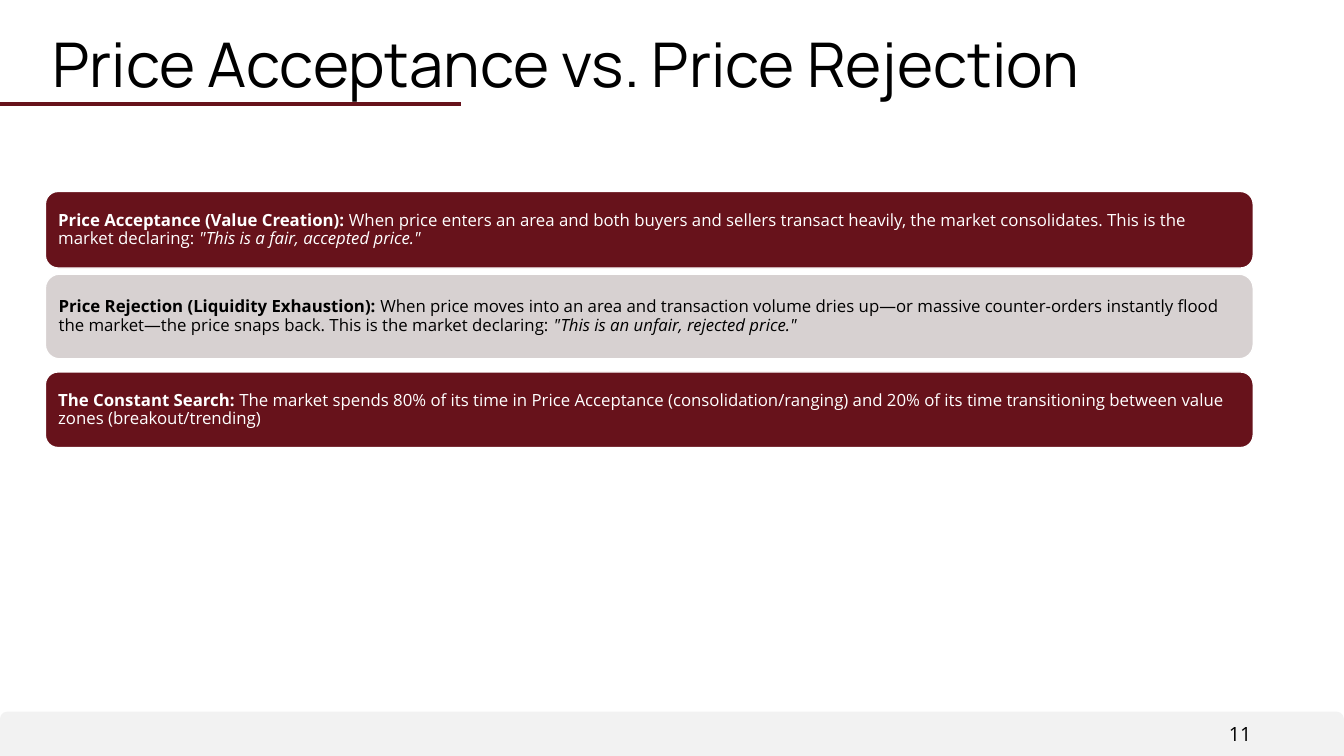
from lxml import etree
from pptx import Presentation
from pptx.dml.color import RGBColor
from pptx.enum.shapes import MSO_CONNECTOR as Connector, MSO_SHAPE as Shape
from pptx.enum.text import MSO_ANCHOR as Anchor, MSO_AUTO_SIZE as AutoSize, PP_ALIGN as Align
from pptx.oxml.ns import qn
from pptx.util import Inches, Pt

MAROON = RGBColor(0x67, 0x12, 0x1B)
STONE = RGBColor(0xD7, 0xD1, 0xD1)
PALE = RGBColor(0xF2, 0xF2, 0xF2)
WHITE = RGBColor(0xFF, 0xFF, 0xFF)
BLACK = RGBColor(0x00, 0x00, 0x00)

# Each card: top and height in percent of the slide, fill, text colour, (wording, style)
CARDS = [
    (25.33, 10.13, MAROON, WHITE, [
        ("Price Acceptance (Value Creation):", "bold"),
        (" When price enters an area and both buyers and sellers transact heavily, "
         "the market consolidates. This is the market declaring: ", ""),
        ('"This is a fair, accepted price."', "italic")]),
    (36.27, 11.2, STONE, BLACK, [
        ("Price Rejection (Liquidity Exhaustion):", "bold"),
        (" When price moves into an area and transaction volume dries up—or massive "
         "counter-orders instantly flood the market—the price snaps back. "
         "This is the market declaring: ", ""),
        ('"This is an unfair, rejected price."', "italic")]),
    (49.2, 10, MAROON, WHITE, [
        ("The Constant Search:", "bold"),
        (" The market spends 80% of its time in Price Acceptance (consolidation/ranging) "
         "and 20% of its time transitioning between value zones (breakout/trending)", "")]),
]


def write(frame, runs, font="Open Sans", size=12, color=BLACK, align=Align.LEFT,
          anchor=Anchor.MIDDLE, inset=(0.1, 0.05), spacing=0.9):
    """Fill a text frame with one paragraph of (wording, style) runs."""
    frame.word_wrap = True
    frame.auto_size = AutoSize.NONE
    frame.vertical_anchor = anchor
    frame.margin_left = frame.margin_right = Inches(inset[0])
    frame.margin_top = frame.margin_bottom = Inches(inset[1])
    paragraph = frame.paragraphs[0]
    paragraph.alignment = align
    paragraph.line_spacing = spacing
    for wording, style in runs:
        run = paragraph.add_run()
        run.text = wording
        run.font.name = font
        run.font.size = Pt(size)
        run.font.color.rgb = color
        run.font.bold = style == "bold"
        run.font.italic = style == "italic"


class Deck:
    """Current slide and its style; lengths are percentages of the slide."""

    def __init__(self):
        self.show = Presentation()
        self.show.slide_width = Inches(13.33)
        self.show.slide_height = Inches(7.5)
        self.slide = self.show.slides.add_slide(self.show.slide_layouts[5])

    def place(self, *shares):
        sides = (self.show.slide_width, self.show.slide_height) * 2
        return [round(side * share / 100) for side, share in zip(sides, shares)]

    def title(self, wording, *area):
        heading = self.slide.shapes.title
        heading.left, heading.top, heading.width, heading.height = self.place(*area)
        write(heading.text_frame, [(wording, "")], font="Manrope", size=44,
              anchor=Anchor.BOTTOM, inset=(0.07, 0.04))

    def panel(self, kind, fill, *area, edge=None):
        panel = self.slide.shapes.add_shape(kind, *self.place(*area))
        panel.shadow.inherit = False
        panel.fill.solid()
        panel.fill.fore_color.rgb = fill
        if edge is None:
            panel.line.fill.background()
        else:
            panel.line.color.rgb = edge
            panel.line.width = Pt(1)
        return panel

    def card(self, top, height, fill, color, runs):
        card = self.panel(Shape.ROUNDED_RECTANGLE, fill, 3.38, top, 89.87, height, edge=WHITE)
        write(card.text_frame, runs, color=color, inset=(0.09, 0.09))

    def rule(self, *ends):
        rule = self.slide.shapes.add_connector(Connector.STRAIGHT, *self.place(*ends))
        rule.line.color.rgb = MAROON
        rule.line.width = Pt(3)
        etree.SubElement(rule._element.spPr, qn("a:effectLst"))

    def label(self, wording, *area, **style):
        box = self.slide.shapes.add_textbox(*self.place(*area))
        write(box.text_frame, [(wording, "")], **style)


def main():
    deck = Deck()
    # Footer band and page number
    deck.panel(Shape.ROUND_2_SAME_RECTANGLE, PALE, 0, 94.13, 100, 5.87)
    deck.label("11", 81.17, 94.8, 12.68, 4.53, size=14, align=Align.RIGHT,
               anchor=Anchor.TOP, spacing=1.0)
    # Heading with its underline
    deck.rule(0, 13.73, 34.28, 13.73)
    deck.title("Price Acceptance vs. Price Rejection", 3.38, 2.67, 93.17, 11.2)
    # Statement cards
    for card in CARDS:
        deck.card(*card)
    deck.show.save("out.pptx")


if __name__ == "__main__":
    main()
